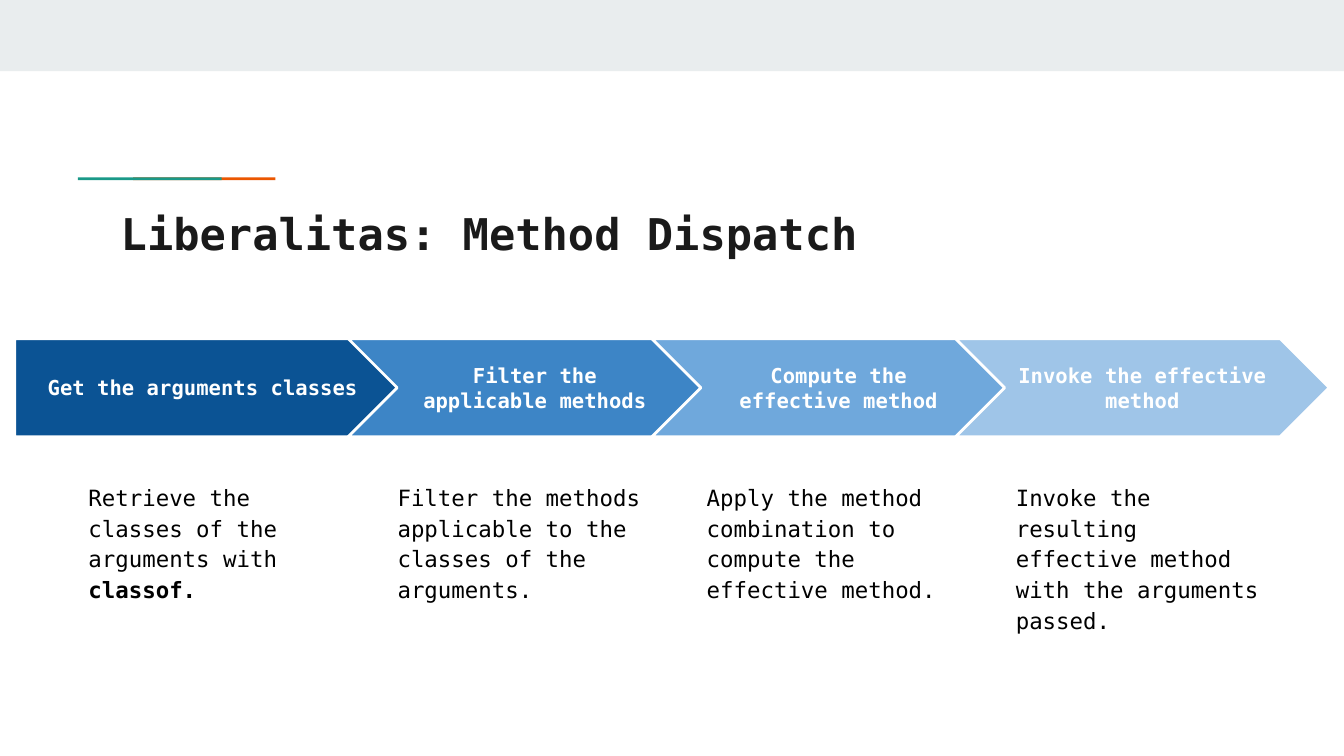
from dataclasses import dataclass

from pptx import Presentation
from pptx.dml.color import RGBColor
from pptx.enum.shapes import MSO_SHAPE
from pptx.enum.text import MSO_ANCHOR, PP_ALIGN
from pptx.util import Inches, Pt

RECTANGLE = MSO_SHAPE.RECTANGLE
PENTAGON = MSO_SHAPE.PENTAGON
CHEVRON = MSO_SHAPE.CHEVRON
TOP, MIDDLE = MSO_ANCHOR.TOP, MSO_ANCHOR.MIDDLE
LEFT, CENTER = PP_ALIGN.LEFT, PP_ALIGN.CENTER


@dataclass(frozen=True)
class Theme:
    font: str = "DejaVu Sans Mono"
    white: str = "FFFFFF"
    black: str = "000000"
    heading: str = "1A1A1A"
    band: str = "E9EDEE"
    orange: str = "EB5600"
    green: str = "1A9988"
    steps: tuple = ("0B5394", "3D85C6", "6FA8DC", "9FC5E8")
    title_size: float = 23.4
    step_size: float = 11
    body_size: float = 12
    outline: float = 1.5


def write_text(frame, runs, *, font, size, color, bold=False,
               align=LEFT, anchor=TOP, spacing=1.0):
    frame.word_wrap = True
    frame.vertical_anchor = anchor
    frame.margin_left = frame.margin_right = Inches(0.1)
    frame.margin_top = frame.margin_bottom = Inches(0.1)
    paragraph = frame.paragraphs[0]
    paragraph.alignment = align
    paragraph.line_spacing = spacing
    for words, strong in runs:
        run = paragraph.add_run()
        run.text = words
        run.font.name = font
        run.font.size = Pt(size)
        run.font.bold = bold or strong
        run.font.color.rgb = RGBColor.from_string(color)


class SlideBuilder:
    def __init__(self, slide, theme):
        self.slide = slide
        self.theme = theme

    def block(self, kind, box, fill, outline=None):
        shape = self.slide.shapes.add_shape(kind, *map(Inches, box))
        shape.shadow.inherit = False
        shape.fill.solid()
        shape.fill.fore_color.rgb = RGBColor.from_string(fill)
        if outline:
            shape.line.color.rgb = RGBColor.from_string(outline)
            shape.line.width = Pt(self.theme.outline)
        else:
            shape.line.fill.background()
        return shape

    def text(self, box, runs, **style):
        label = self.slide.shapes.add_textbox(*map(Inches, box))
        write_text(label.text_frame, runs, font=self.theme.font, **style)

    def step(self, kind, box, fill, heading):
        arrow = self.block(kind, box, fill, self.theme.white)
        arrow.adjustments[0] = 0.5
        write_text(arrow.text_frame, [(heading, False)], font=self.theme.font,
                   size=self.theme.step_size, color=self.theme.white, bold=True,
                   align=CENTER, anchor=MIDDLE)


STEPS = [
    ("Get the arguments classes",
     [("Retrieve the classes of the arguments with ", False), ("classof.", True)]),
    ("Filter the applicable methods",
     [("Filter the methods applicable to the classes of the arguments.", False)]),
    ("Compute the effective method",
     [("Apply the method combination to compute the effective method.", False)]),
    ("Invoke the effective method",
     [("Invoke the resulting effective method with the arguments passed.", False)]),
]


def main():
    theme = Theme()
    deck = Presentation()
    deck.slide_width = Inches(10)
    deck.slide_height = deck.slide_width * 9 // 16
    builder = SlideBuilder(deck.slides.add_slide(deck.slide_layouts[6]), theme)

    builder.block(RECTANGLE, (0, 0, 10, 0.53), theme.band)
    builder.block(RECTANGLE, (0.99, 1.32, 1.06, 0.02), theme.orange)
    builder.block(RECTANGLE, (0.58, 1.32, 1.07, 0.02), theme.green)
    builder.text((0.8, 1.44, 8.41, 0.59), [("Liberalitas: Method Dispatch", False)],
                 size=theme.title_size, color=theme.heading, bold=True)

    for index, ((heading, details), fill) in enumerate(zip(STEPS, theme.steps)):
        if index == 0:
            kind, left, width = PENTAGON, 0.11, 2.98
        else:
            kind, left, width = CHEVRON, 2.59 + 2.26 * (index - 1), 2.78
        builder.step(kind, (left, 2.52, width, 0.73), fill, heading)
        builder.text((0.56 + 2.3 * index, 3.47, 2.08, 1.3), details,
                     size=theme.body_size, color=theme.black, spacing=1.15)

    deck.save("out.pptx")


if __name__ == "__main__":
    main()
